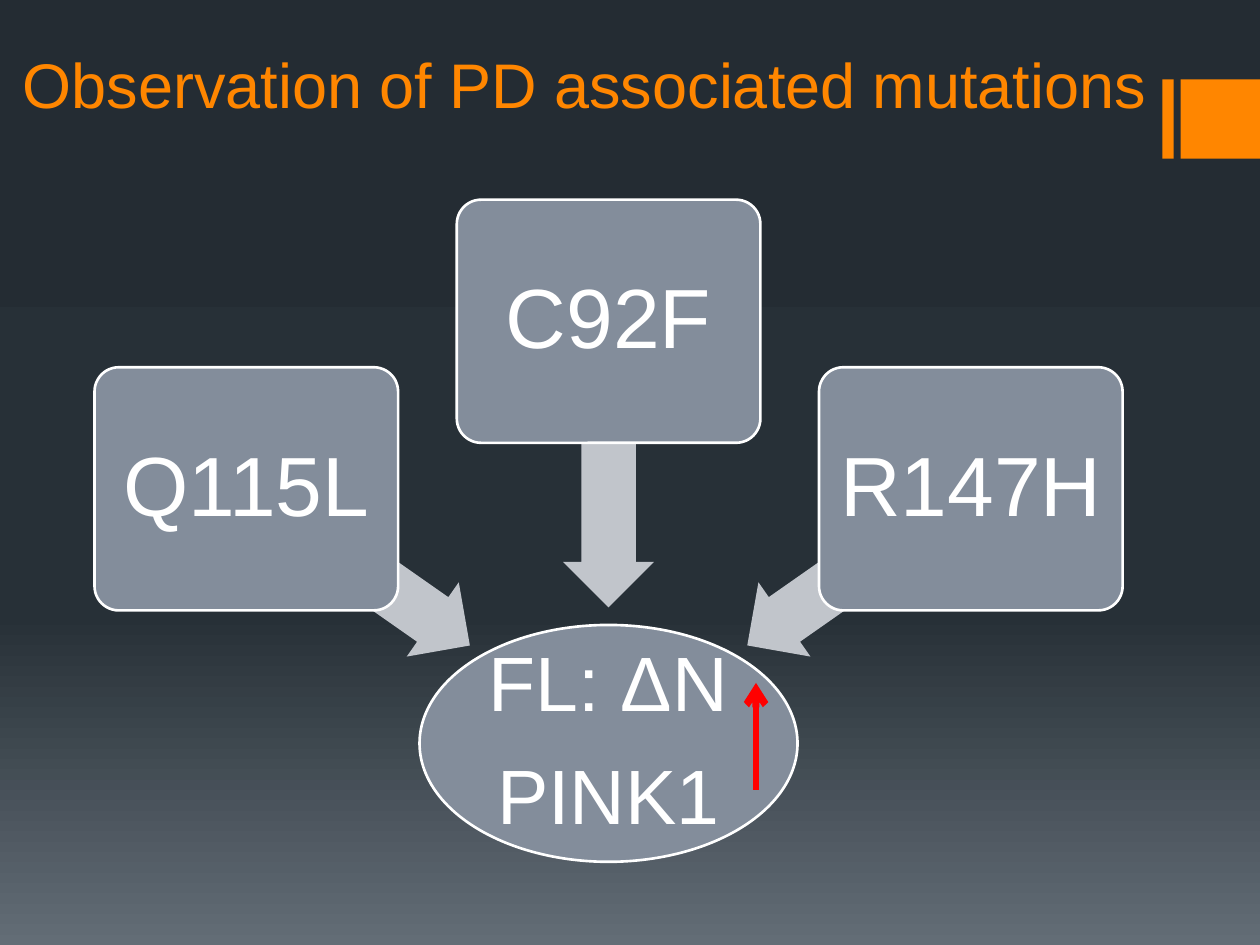
from copy import deepcopy

from lxml import etree
from pptx import Presentation
from pptx.dml.color import RGBColor
from pptx.enum.shapes import MSO_CONNECTOR, MSO_SHAPE
from pptx.enum.text import MSO_ANCHOR, MSO_AUTO_SIZE, PP_ALIGN
from pptx.oxml.ns import qn
from pptx.util import Inches, Pt

RECT, ELLIPSE = MSO_SHAPE.RECTANGLE, MSO_SHAPE.OVAL
ROUNDED, LEFT_ARROW = MSO_SHAPE.ROUNDED_RECTANGLE, MSO_SHAPE.LEFT_ARROW
STRAIGHT = MSO_CONNECTOR.STRAIGHT
MIDDLE, BOTTOM = MSO_ANCHOR.MIDDLE, MSO_ANCHOR.BOTTOM
CENTER, LEFT = PP_ALIGN.CENTER, PP_ALIGN.LEFT

ORANGE = RGBColor(0xFF, 0x86, 0x00)
SLATE = RGBColor(0x83, 0x8D, 0x9B)
PALE = RGBColor(0xC1, 0xC5, 0xCB)
WHITE = RGBColor(0xFF, 0xFF, 0xFF)
RED = RGBColor(0xFF, 0x00, 0x00)
BACKDROP = [(0, RGBColor(0x24, 0x2C, 0x33)),
            (0.65, RGBColor(0x27, 0x30, 0x37)),
            (1, RGBColor(0x63, 0x6D, 0x76))]
FONT = "Arial"

# Diagram grid: three columns around one axis, the outer two set lower
AXIS, COLUMN_STEP = 4.83, 2.875
BOX_W, BOX_H = 2.41, 1.93
HIGH_ROW, LOW_ROW = 2.55, 3.88
ARROW_H = 0.72

# Column, row centre, mutation, arrow centre (x offset, y), length, rotation
MUTATIONS = [
    (-1, LOW_ROW, "Q115L", (-1.99, 4.5), 2.17, 215),
    (0, HIGH_ROW, "C92F", (0, 3.68), 2.28, 270),
    (1, LOW_ROW, "R147H", (1.99, 4.5), 2.17, 325),
]


def paint_background(slide):
    fill = slide.background.fill
    fill.gradient()
    fill.gradient_angle = 270
    stop_list = next(slide.element.iter(qn("a:gsLst")))
    stop_list.insert(1, deepcopy(stop_list[0]))
    for stop, (position, color) in zip(fill.gradient_stops, BACKDROP):
        stop.position = position
        stop.color.rgb = color


def add_run(paragraph, text, size, color):
    run = paragraph.add_run()
    run.text = text
    run.font.name = FONT
    run.font.size = Pt(size)
    run.font.color.rgb = color


def add_filled(slide, kind, center, size, color, outline=None):
    (x, y), (w, h) = center, size
    shape = slide.shapes.add_shape(
        kind, Inches(x - w / 2), Inches(y - h / 2), Inches(w), Inches(h))
    shape.shadow.inherit = False
    shape.fill.solid()
    shape.fill.fore_color.rgb = color
    if outline is None:
        shape.line.fill.background()
    else:
        shape.line.color.rgb = outline
        shape.line.width = Pt(1.5)
    return shape


def label(shape, lines, size, inset):
    frame = shape.text_frame
    frame.word_wrap = True
    frame.vertical_anchor = MIDDLE
    frame.margin_left = frame.margin_right = Inches(inset)
    frame.margin_top = frame.margin_bottom = Inches(inset)
    for index, line in enumerate(lines):
        paragraph = frame.add_paragraph() if index else frame.paragraphs[0]
        paragraph.alignment = CENTER
        paragraph.line_spacing = 0.9
        if index < len(lines) - 1:
            paragraph.space_after = Pt(17)
        add_run(paragraph, line, size, WHITE)


def add_title(slide, text):
    title = slide.shapes.title
    title.left, title.top = Inches(0.08), Inches(0.67)
    title.width, title.height = Inches(9.17), Inches(0.92)
    frame = title.text_frame
    frame.auto_size = MSO_AUTO_SIZE.NONE
    frame.vertical_anchor = BOTTOM
    frame.margin_bottom = Inches(0.63)
    frame.paragraphs[0].alignment = LEFT
    add_run(frame.paragraphs[0], text, 36, ORANGE)


def add_mutation(slide, column, row, name, arrow_at, length, rotation):
    offset, arrow_y = arrow_at
    arrow = add_filled(slide, LEFT_ARROW, (AXIS + offset, arrow_y),
                       (length, ARROW_H), PALE)
    arrow.adjustments[0], arrow.adjustments[1] = 0.6, 0.5
    arrow.rotation = rotation
    box = add_filled(slide, ROUNDED, (AXIS + column * COLUMN_STEP, row),
                     (BOX_W, BOX_H), SLATE, WHITE)
    box.adjustments[0] = 0.1
    label(box, [name], 48, 0.1)


def add_increase_arrow(slide, x, bottom, top):
    arrow = slide.shapes.add_connector(
        STRAIGHT, Inches(x), Inches(bottom), Inches(x), Inches(top))
    arrow.line.color.rgb = RED
    arrow.line.width = Pt(4)
    etree.SubElement(arrow.line._get_or_add_ln(), qn("a:tailEnd"), type="arrow")
    etree.SubElement(arrow.element.spPr, qn("a:effectLst"))


def main():
    deck = Presentation()
    deck.slide_width, deck.slide_height = Inches(10), Inches(7.5)
    slide = deck.slides.add_slide(deck.slide_layouts[5])
    paint_background(slide)

    # Heading with the accent bars at the right edge
    for center_x, width in [(9.27, 0.09), (9.685, 0.63)]:
        add_filled(slide, RECT, (center_x, 0.945), (width, 0.63), ORANGE)
    add_title(slide, "Observation of PD associated mutations")

    # Shared outcome, then the mutations pointing at it
    outcome = add_filled(slide, ELLIPSE, (AXIS, 5.9), (3, 1.88), SLATE, WHITE)
    label(outcome, ["FL: ΔN", "PINK1"], 44, 0.03)
    for mutation in MUTATIONS:
        add_mutation(slide, *mutation)

    # Rise of the ratio
    add_increase_arrow(slide, 6, 6.27, 5.42)

    deck.save("out.pptx")


if __name__ == "__main__":
    main()
